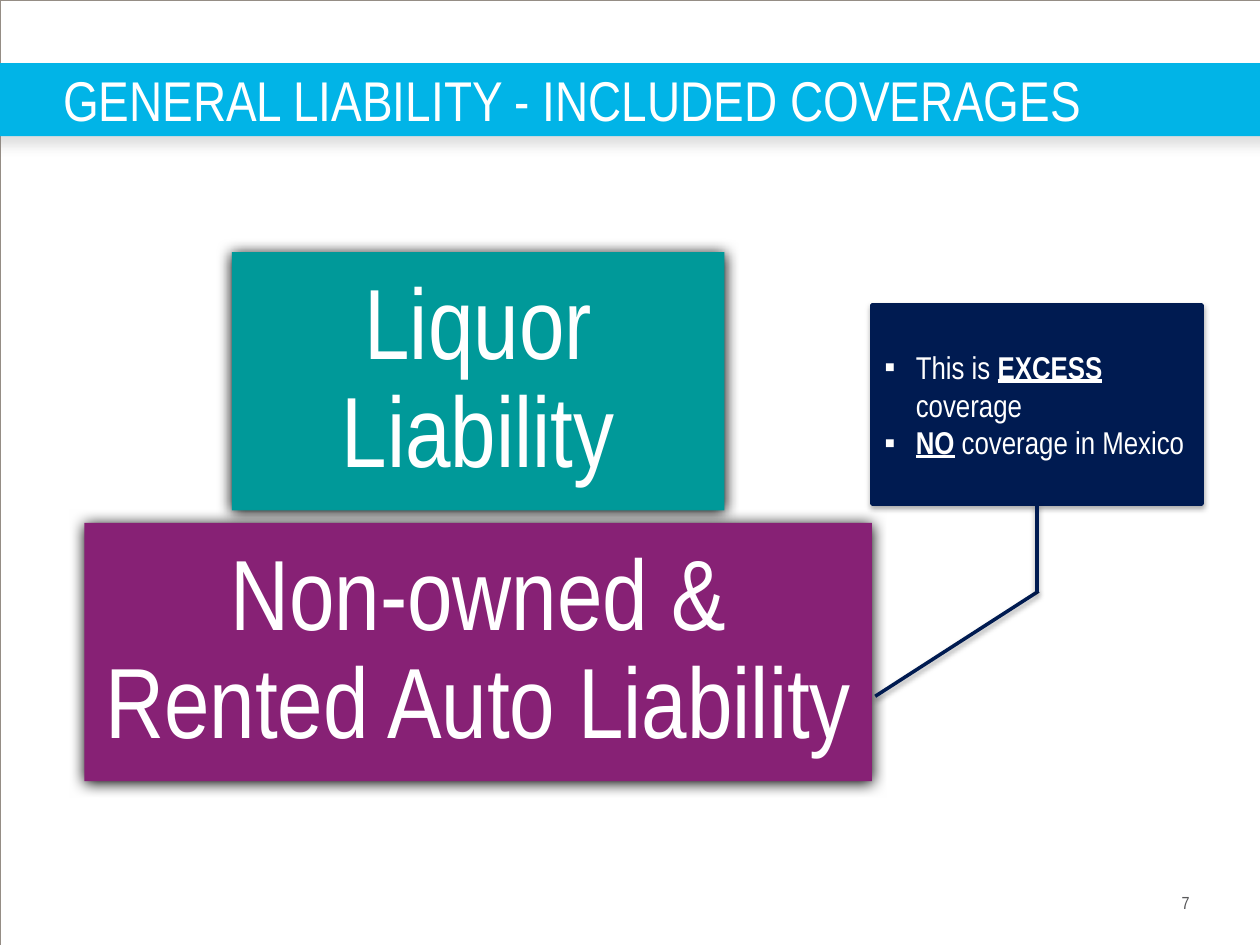
from dataclasses import dataclass

from lxml import etree
from pptx import Presentation
from pptx.dml.color import RGBColor
from pptx.enum.shapes import MSO_CONNECTOR, MSO_SHAPE
from pptx.enum.text import MSO_ANCHOR, PP_ALIGN
from pptx.oxml.ns import qn
from pptx.util import Inches, Pt

RECTANGLE = MSO_SHAPE.RECTANGLE
CALLOUT = MSO_SHAPE.LINE_CALLOUT_1
STRAIGHT = MSO_CONNECTOR.STRAIGHT
LEFT, CENTER, RIGHT = PP_ALIGN.LEFT, PP_ALIGN.CENTER, PP_ALIGN.RIGHT
MIDDLE = MSO_ANCHOR.MIDDLE


@dataclass(frozen=True)
class Theme:
    font: str = "Arial Narrow"
    white: str = "FFFFFF"
    frame: str = "958D85"
    band: str = "01B4E7"
    teal: str = "009999"
    purple: str = "872175"
    navy: str = "001B51"
    number: str = "58585A"
    title_size: float = 32
    block_size: float = 57
    note_size: float = 18
    number_size: float = 10
    # Shadows: colour, opacity %, blur pt, distance pt
    band_shadow: tuple = ("808080", 25, 7, 4.8)
    block_shadow: tuple = ("000000", 100, 8.5, 1)
    note_shadow: tuple = ("000000", 35, 3.1, 1.8)


THEME = Theme()


def rgb(value):
    return RGBColor.from_string(value)


def add_shadow(shape, color, opacity, blur, distance):
    """Downward outer shadow; call after fill and line are set."""
    props = shape.element.spPr
    effects = props.find(qn("a:effectLst"))
    if effects is None:
        effects = etree.SubElement(props, qn("a:effectLst"))
    outer = etree.SubElement(
        effects, qn("a:outerShdw"), blurRad=str(Pt(blur)), dist=str(Pt(distance)),
        dir="5400000", algn="ctr", rotWithShape="0")
    tint = etree.SubElement(outer, qn("a:srgbClr"), val=color)
    etree.SubElement(tint, qn("a:alpha"), val=str(opacity * 1000))


def add_box(page, kind, box, fill=None, line=None, width=0, shadow=None):
    shape = page.shapes.add_shape(kind, *map(Inches, box))
    shape.shadow.inherit = False
    if fill:
        shape.fill.solid()
        shape.fill.fore_color.rgb = rgb(fill)
    else:
        shape.fill.background()
    if line:
        shape.line.color.rgb = rgb(line)
        shape.line.width = Pt(width)
    else:
        shape.line.fill.background()
    if shadow:
        add_shadow(shape, *shadow)
    return shape


def set_frame(shape, margin):
    frame = shape.text_frame
    frame.word_wrap = True
    frame.vertical_anchor = MIDDLE
    frame.margin_left = frame.margin_right = Inches(margin)
    frame.margin_top = frame.margin_bottom = Inches(margin)
    return frame


def style_para(para, size, color, align):
    para.alignment = align
    para.font.name = THEME.font
    para.font.size = Pt(size)
    para.font.color.rgb = rgb(color)


def add_title(page, box, text):
    left, top, width, height = box
    # The band runs past both slide edges, behind the title
    add_box(page, RECTANGLE, (-0.08, top, 10.17, height), THEME.band,
            shadow=THEME.band_shadow)
    title = page.shapes.title
    title.element.getparent().append(title.element)
    title.left, title.top, title.width, title.height = map(Inches, box)
    frame = set_frame(title, 0)
    frame.text = text
    style_para(frame.paragraphs[0], THEME.title_size, THEME.white, LEFT)


def add_block(page, box, text, fill):
    block = add_box(page, RECTANGLE, box, fill, shadow=THEME.block_shadow)
    frame = set_frame(block, 0.16)
    frame.text = text
    para = frame.paragraphs[0]
    para.line_spacing = 0.9
    style_para(para, THEME.block_size, THEME.white, CENTER)


def add_pyramid(page, box):
    """Stack of centred blocks, each wider than the one above."""
    left, top, width, height = box
    gap = 0.1
    levels = [
        ("Liquor Liability", 3.91, THEME.teal),
        ("Non-owned & Rented Auto Liability", 6.25, THEME.purple),
    ]
    step = (height + gap) / len(levels)
    for row, (text, block_width, fill) in enumerate(levels):
        block_left = left + (width - block_width) / 2
        add_block(page, (block_left, top + row * step, block_width, step - gap),
                  text, fill)


def add_bullet(para, indent):
    props = para._p.get_or_add_pPr()
    props.set("marL", str(Inches(indent)))
    props.set("indent", str(-Inches(indent)))
    etree.SubElement(props, qn("a:buFont"), typeface="Arial")
    etree.SubElement(props, qn("a:buChar"), char="▪")


def add_note(page, box):
    """Callout with a bent leader line pointing at the lower block."""
    left, top, width, height = box
    note = add_box(page, CALLOUT, box, THEME.navy, THEME.navy, 2, THEME.note_shadow)
    for index, value in enumerate((1.438, 0.505, 1.966, 0.01)):
        note.adjustments[index] = value
    frame = note.text_frame
    frame.word_wrap = True
    frame.vertical_anchor = MIDDLE

    # Each span is its text and whether it is stressed
    bullets = [
        [("This is ", False), ("EXCESS", True), (" coverage", False)],
        [("NO", True), (" coverage in Mexico", False)],
    ]
    for index, spans in enumerate(bullets):
        para = frame.add_paragraph() if index else frame.paragraphs[0]
        add_bullet(para, 0.25)
        style_para(para, THEME.note_size, THEME.white, LEFT)
        for text, stressed in spans:
            span = para.add_run()
            span.text = text
            if stressed:
                span.font.bold = span.font.underline = True

    # Upright part of the leader
    middle, bottom = left + width / 2, top + height
    stem = page.shapes.add_connector(
        STRAIGHT, *map(Inches, (middle, bottom, middle, bottom + 0.7)))
    stem.line.color.rgb = rgb(THEME.navy)
    stem.line.width = Pt(2)
    add_shadow(stem, *THEME.note_shadow)


def add_page_number(page, box, number):
    frame = set_frame(page.shapes.add_textbox(*map(Inches, box)), 0)
    frame.text = number
    style_para(frame.paragraphs[0], THEME.number_size, THEME.number, RIGHT)


def main():
    deck = Presentation()
    deck.slide_width, deck.slide_height = Inches(10), Inches(7.5)
    page = deck.slides.add_slide(deck.slide_layouts[5])

    add_page_number(page, (7.75, 7.08, 1.69, 0.17), "7")
    add_box(page, RECTANGLE, (0, 0, 10, 7.5), line=THEME.frame, width=0.13)
    add_title(page, (0.5, 0.5, 9.25, 0.58), "GENERAL LIABILITY - INCLUDED COVERAGES")
    add_pyramid(page, (0.67, 2, 6.25, 4.2))
    add_note(page, (6.92, 2.42, 2.62, 1.58))

    deck.save("out.pptx")


if __name__ == "__main__":
    main()
